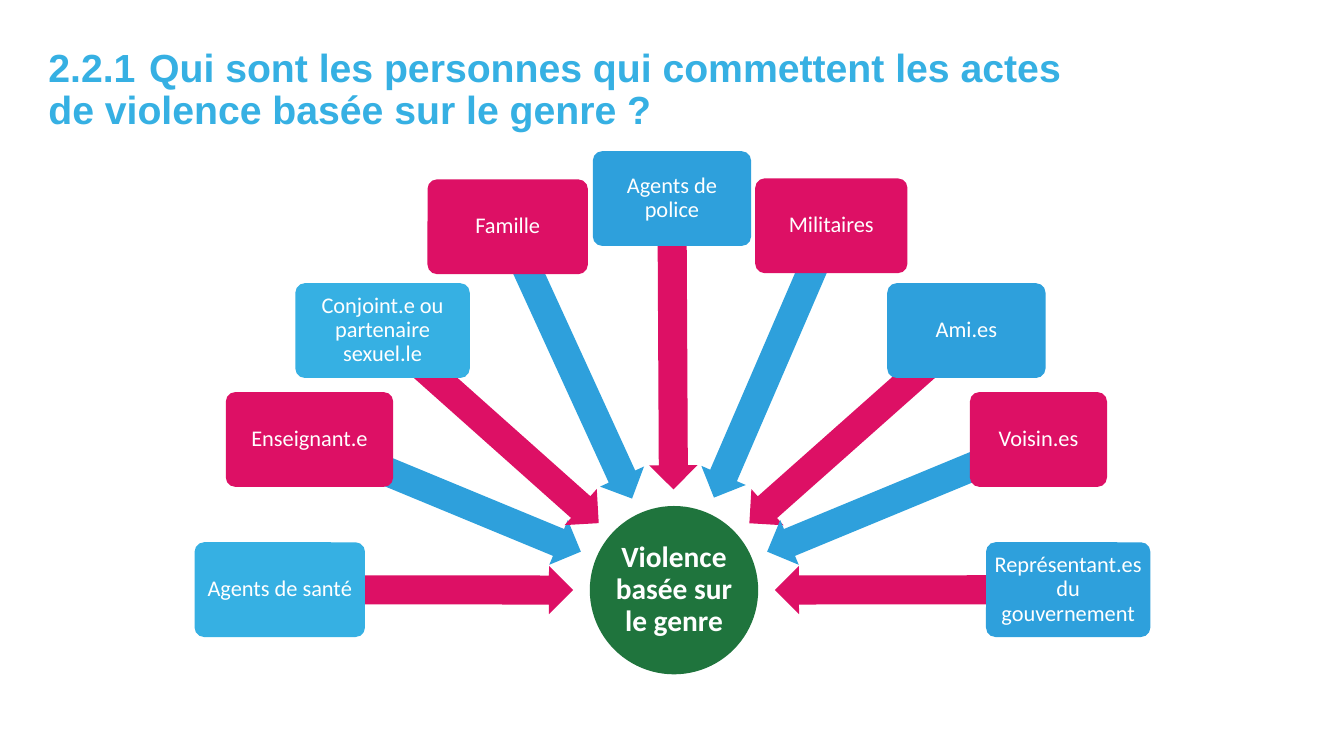
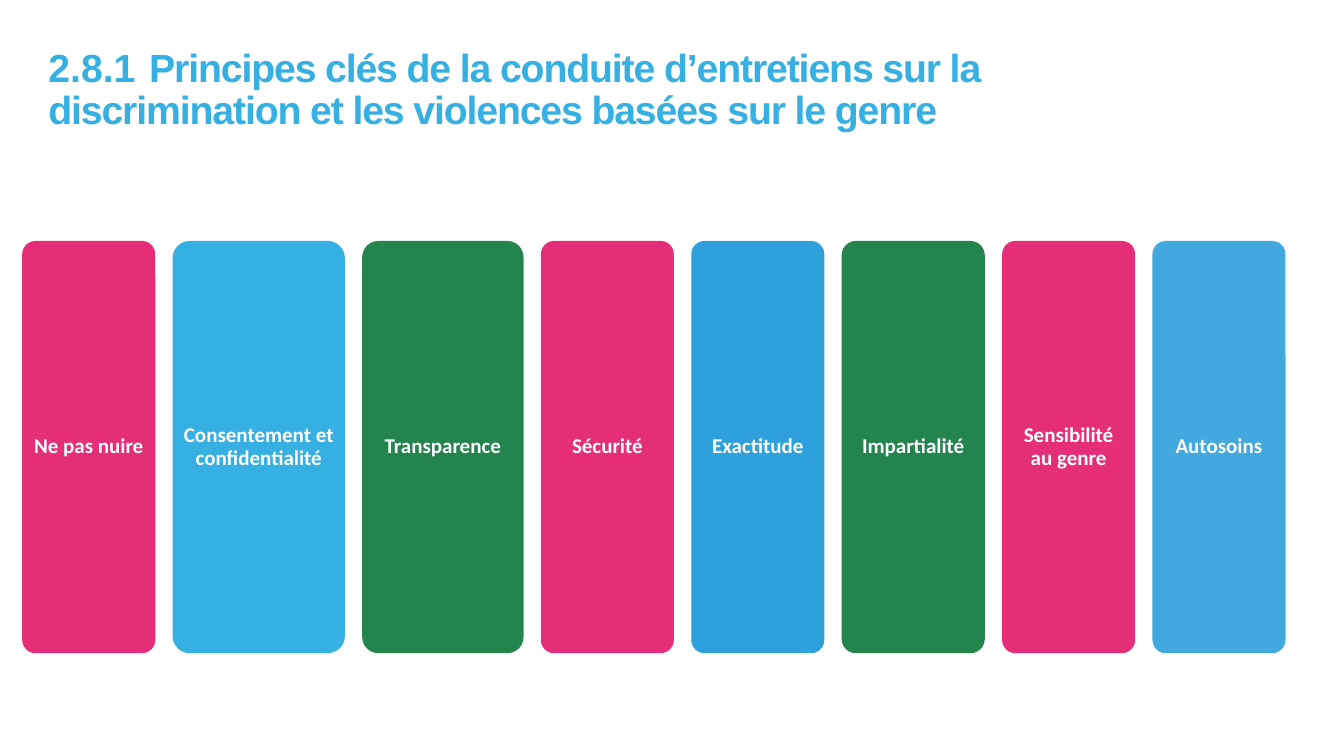
import math
from dataclasses import dataclass

import lxml.etree
import pptx
import pptx.dml.color
import pptx.enum.shapes
import pptx.enum.text
import pptx.oxml.ns
import pptx.util

Inches = pptx.util.Inches
Pt = pptx.util.Pt
RGB = pptx.dml.color.RGBColor.from_string
SHAPE = pptx.enum.shapes.MSO_SHAPE
ALIGN = pptx.enum.text.PP_ALIGN
ANCHOR = pptx.enum.text.MSO_ANCHOR


@dataclass(frozen=True)
class Theme:
    sky: str = "36B0E3"
    blue: str = "2EA0DC"
    magenta: str = "DD1065"
    pink: str = "E52E78"
    forest: str = "1F743D"
    green: str = "23844E"
    white: str = "FFFFFF"
    title_font: str = "Arial"
    body_font: str = "Calibri"
    title_size: int = 28
    hub_size: int = 21
    card_size: int = 16
    column_size: int = 15
    line_spacing: float = 0.9


@dataclass(frozen=True)
class Box:
    """A rectangle in inches."""
    left: float
    top: float
    width: float
    height: float

    @property
    def centre(self):
        return self.left + self.width / 2, self.top + self.height / 2

    def inner(self, left, top, width, height):
        """A box whose corner is measured from this one's corner."""
        return Box(self.left + left, self.top + top, width, height)

    def lengths(self):
        return [Inches(n) for n in (self.left, self.top, self.width, self.height)]


THEME = Theme()
TITLE_BOX = Box(0.48, 0.48, 10.5, 0.85)
FAN_BOX = Box(1.93, 1.5, 9.48, 5.19)
COLUMNS_BOX = Box(0.22, 2.39, 12.53, 4.09)

HUB_TEXT = "Violence basée sur le genre"
HUB_LEFT, HUB_TOP, HUB_SIZE = 3.92, 3.52, 1.67
CARD_HEIGHT = 0.94
ARROW_HEIGHT = 0.48
ARROW_START = 1.0  # distance from the hub centre to each arrow tip

# text, left and top within the fan, width, colour
CARDS = [
    ("Agents de santé", 0, 3.88, 1.69, THEME.sky),
    ("Enseignant.e", 0.31, 2.39, 1.66, THEME.magenta),
    ("Conjoint.e ou partenaire sexuel.le", 1, 1.31, 1.73, THEME.sky),
    ("Famille", 2.31, 0.28, 1.59, THEME.magenta),
    ("Agents de police", 3.95, 0, 1.57, THEME.blue),
    ("Militaires", 5.56, 0.27, 1.51, THEME.magenta),
    ("Ami.es", 6.87, 1.31, 1.57, THEME.blue),
    ("Voisin.es", 7.69, 2.39, 1.36, THEME.magenta),
    ("Représentant.es du gouvernement", 7.85, 3.88, 1.63, THEME.blue),
]

# text, width, colour, opacity in percent
COLUMNS = [
    ("Ne pas nuire", 1.32, THEME.pink, 100),
    ("Consentement et confidentialité", 1.71, THEME.sky, 100),
    ("Transparence", 1.6, THEME.green, 100),
    ("Sécurité", 1.32, THEME.pink, 100),
    ("Exactitude", 1.32, THEME.blue, 100),
    ("Impartialité", 1.42, THEME.green, 100),
    ("Sensibilité au genre", 1.32, THEME.pink, 100),
    ("Autosoins", 1.32, THEME.blue, 90),
]


def add_run(p, text, font, size, color, bold=False):
    r = p.add_run()
    r.text = text
    r.font.name = font
    r.font.size = Pt(size)
    r.font.bold = bold
    r.font.color.rgb = RGB(color)
    return r


def set_frame(tf, anchor, inset):
    tf.word_wrap = True
    tf.vertical_anchor = anchor
    tf.margin_left = tf.margin_right = Inches(inset)
    tf.margin_top = tf.margin_bottom = Inches(inset)


def add_filled(slide, kind, box, color, adjustments=(), opacity=100):
    sp = slide.shapes.add_shape(kind, *box.lengths())
    sp.shadow.inherit = False
    sp.line.fill.background()
    sp.fill.solid()
    sp.fill.fore_color.rgb = RGB(color)
    for i, value in enumerate(adjustments):
        sp.adjustments[i] = value
    if opacity < 100:
        qn = pptx.oxml.ns.qn
        clr = sp.fill._xPr.find(qn("a:solidFill")).find(qn("a:srgbClr"))
        lxml.etree.SubElement(clr, qn("a:alpha")).set("val", str(opacity * 1000))
    return sp


def add_label(sp, text, size, inset, bold=False):
    set_frame(sp.text_frame, ANCHOR.MIDDLE, inset)
    p = sp.text_frame.paragraphs[0]
    p.alignment = ALIGN.CENTER
    p.line_spacing = THEME.line_spacing
    add_run(p, text, THEME.body_font, size, THEME.white, bold)


def add_titled_slide(prs, number, title, spacing=0):
    """Add a slide with a numbered title; spacing is letter spacing in points."""
    slide = prs.slides.add_slide(prs.slide_layouts[5])
    s = slide.shapes.title
    s.left, s.top, s.width, s.height = TITLE_BOX.lengths()
    set_frame(s.text_frame, ANCHOR.TOP, 0)
    p = s.text_frame.paragraphs[0]
    p.alignment = ALIGN.LEFT
    p.line_spacing = THEME.line_spacing
    style = (THEME.title_font, THEME.title_size, THEME.sky, True)
    add_run(p, number + "\t", *style)
    r = add_run(p, title, *style)
    if spacing:
        r._r.get_or_add_rPr().set("spc", str(round(spacing * 100)))
    return slide


def add_arrow(slide, hub, card, color):
    """Draw an arrow from the centre of a card towards the hub."""
    hub_x, hub_y = hub.centre
    card_x, card_y = card.centre
    angle = math.atan2(card_y - hub_y, card_x - hub_x)
    reach = math.hypot(card_x - hub_x, card_y - hub_y)
    length = reach - ARROW_START
    middle = ARROW_START + length / 2
    box = Box(hub_x + middle * math.cos(angle) - length / 2,
              hub_y + middle * math.sin(angle) - ARROW_HEIGHT / 2,
              length, ARROW_HEIGHT)
    sp = add_filled(slide, SHAPE.LEFT_ARROW, box, color, (0.6, 0.5))
    sp.rotation = math.degrees(angle) % 360


def add_fan(slide, box):
    hub = box.inner(HUB_LEFT, HUB_TOP, HUB_SIZE, HUB_SIZE)
    sp = add_filled(slide, SHAPE.OVAL, hub, THEME.forest)
    add_label(sp, HUB_TEXT, THEME.hub_size, 0.01, bold=True)
    arrow_colors = (THEME.magenta, THEME.blue)
    for i, (text, left, top, width, color) in enumerate(CARDS):
        card = box.inner(left, top, width, CARD_HEIGHT)
        add_arrow(slide, hub, card, arrow_colors[i % 2])
        sp = add_filled(slide, SHAPE.ROUNDED_RECTANGLE, card, color, (0.1,))
        add_label(sp, text, THEME.card_size, 0.03)


def add_columns(slide, box):
    """Fill the box with columns of given widths, separated by equal gaps."""
    gap = (box.width - sum(column[1] for column in COLUMNS)) / (len(COLUMNS) - 1)
    left = 0
    for text, width, color, opacity in COLUMNS:
        sp = add_filled(slide, SHAPE.ROUNDED_RECTANGLE,
                        box.inner(left, 0, width, box.height), color, (0.1,), opacity)
        add_label(sp, text, THEME.column_size, 0.06, bold=True)
        left += width + gap


def main():
    prs = pptx.Presentation()
    prs.slide_width, prs.slide_height = Inches(13.33), Inches(7.5)
    slide = add_titled_slide(
        prs, "2.2.1",
        "Qui sont les personnes qui commettent les actes de violence basée sur le genre ?")
    add_fan(slide, FAN_BOX)
    slide = add_titled_slide(
        prs, "2.8.1",
        "Principes clés de la conduite d’entretiens sur la discrimination "
        "et les violences basées sur le genre", spacing=-0.8)
    add_columns(slide, COLUMNS_BOX)
    prs.save("out.pptx")


if __name__ == "__main__":
    main()
